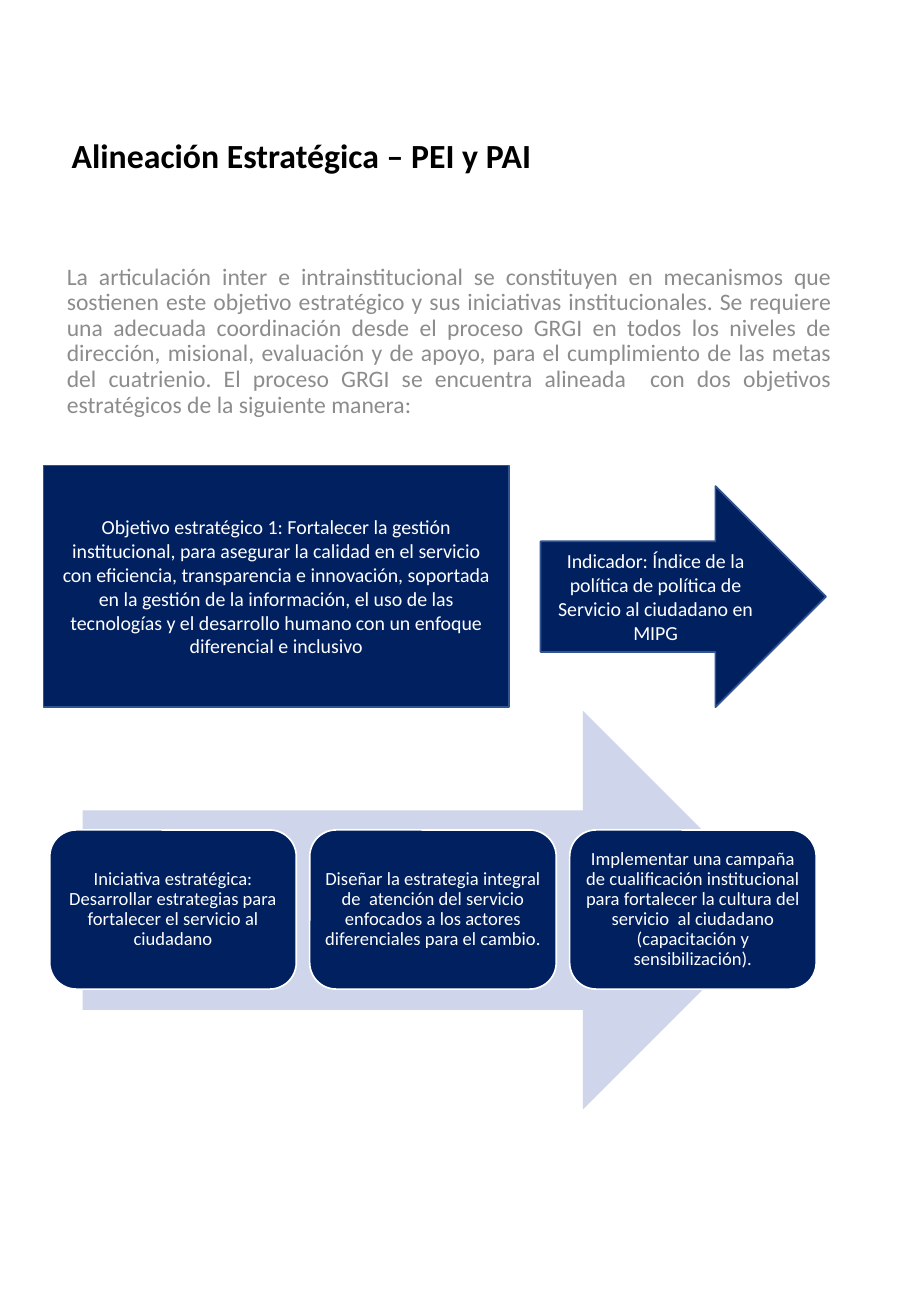
from dataclasses import dataclass

from lxml import etree
from pptx import Presentation
from pptx.dml.color import RGBColor
from pptx.enum.shapes import MSO_SHAPE
from pptx.enum.text import MSO_ANCHOR, MSO_AUTO_SIZE, PP_ALIGN
from pptx.oxml.ns import qn
from pptx.util import Inches, Pt

RECTANGLE = MSO_SHAPE.RECTANGLE
ROUNDED = MSO_SHAPE.ROUNDED_RECTANGLE
ARROW = MSO_SHAPE.RIGHT_ARROW
LEFT, CENTER, JUSTIFY = PP_ALIGN.LEFT, PP_ALIGN.CENTER, PP_ALIGN.JUSTIFY
TOP, MIDDLE = MSO_ANCHOR.TOP, MSO_ANCHOR.MIDDLE
NO_AUTOFIT = MSO_AUTO_SIZE.NONE


@dataclass(frozen=True)
class Theme:
    font: str = "Calibri"
    black: str = "000000"
    gray: str = "8C8C8C"
    white: str = "FFFFFF"
    navy: str = "002060"
    outline: str = "325491"
    pale: str = "CFD5EA"
    title_size: float = 20
    body_size: float = 14
    objective_size: float = 11.8
    card_size: float = 11


THEME = Theme()

TITLE = "Alineación Estratégica – PEI y PAI"
INTRODUCTION = (
    "La articulación inter e intrainstitucional se constituyen en mecanismos que "
    "sostienen este objetivo estratégico y sus iniciativas institucionales. Se requiere "
    "una adecuada coordinación desde el proceso GRGI en todos los niveles de dirección, "
    "misional, evaluación y de apoyo, para el cumplimiento de las metas del cuatrienio. "
    "El proceso GRGI se encuentra alineada  con dos objetivos estratégicos de la "
    "siguiente manera:"
)
OBJECTIVE = (
    "Objetivo estratégico 1: Fortalecer la gestión institucional, para asegurar la "
    "calidad en el servicio con eficiencia, transparencia e innovación, soportada en la "
    "gestión de la información, el uso de las tecnologías y el desarrollo humano con un "
    "enfoque diferencial e inclusivo"
)
INDICATOR = (
    "Indicador: Índice de la política de política de Servicio al ciudadano en MIPG"
)
INITIATIVES = [
    "Iniciativa estratégica: Desarrollar estrategias para fortalecer el servicio al "
    "ciudadano",
    "Diseñar la estrategia integral de  atención del servicio enfocados a los actores "
    "diferenciales para el cambio.",
    "Implementar una campaña de cualificación institucional para fortalecer la cultura "
    "del servicio  al ciudadano (capacitación y sensibilización).",
]


def set_text(shape, text, size, color, align, anchor, spacing=1.0, bold=False):
    frame = shape.text_frame
    frame.text = text
    frame.word_wrap = True
    frame.auto_size = NO_AUTOFIT
    frame.vertical_anchor = anchor
    paragraph = frame.paragraphs[0]
    paragraph.alignment = align
    paragraph.line_spacing = spacing
    paragraph.space_before = Pt(0)
    font = paragraph.runs[0].font
    font.name, font.size, font.bold = THEME.font, Pt(size), bold
    font.color.rgb = RGBColor.from_string(color)


def place(shape, left, top, width, height):
    shape.left, shape.top = Inches(left), Inches(top)
    shape.width, shape.height = Inches(width), Inches(height)


def remove_bullet(paragraph):
    properties = paragraph._p.get_or_add_pPr()
    properties.set("marL", "0")
    properties.set("indent", "0")
    etree.SubElement(properties, qn("a:buNone"))


def add_block(slide, kind, left, top, width, height, fill, line=None):
    shape = slide.shapes.add_shape(
        kind, Inches(left), Inches(top), Inches(width), Inches(height)
    )
    shape.shadow.inherit = False
    shape.fill.solid()
    shape.fill.fore_color.rgb = RGBColor.from_string(fill)
    if line:
        shape.line.color.rgb = RGBColor.from_string(line)
        shape.line.width = Pt(1)
    else:
        shape.line.fill.background()
    return shape


def add_objective(slide, kind, text, left, top, width, height):
    shape = add_block(slide, kind, left, top, width, height, THEME.navy, THEME.outline)
    set_text(shape, text, THEME.objective_size, THEME.white, CENTER, MIDDLE)


def add_initiative(slide, text, left):
    card = add_block(slide, ROUNDED, left, 6.83, 2.03, 1.31, THEME.navy, THEME.white)
    frame = card.text_frame
    frame.margin_left = frame.margin_right = Inches(0.05)
    frame.margin_top = frame.margin_bottom = Inches(0.05)
    set_text(card, text, THEME.card_size, THEME.white, CENTER, MIDDLE, spacing=0.9)


def main():
    presentation = Presentation()
    presentation.slide_width = Inches(7.5)
    presentation.slide_height = Inches(10.83)
    slide = presentation.slides.add_slide(presentation.slide_layouts[1])

    # Title and introduction
    title, body = slide.shapes.title, slide.placeholders[1]
    place(title, 0.49, 1.06, 4.53, 0.44)
    set_text(title, TITLE, THEME.title_size, THEME.black, LEFT, TOP, bold=True)
    place(body, 0.45, 2.13, 6.5, 8.7)
    set_text(body, INTRODUCTION, THEME.body_size, THEME.gray, JUSTIFY, TOP, spacing=0.9)
    remove_bullet(body.text_frame.paragraphs[0])

    # Strategic objective and its indicator
    add_objective(slide, RECTANGLE, OBJECTIVE, 0.36, 3.83, 3.83, 1.99)
    add_objective(slide, ARROW, INDICATOR, 4.45, 4, 2.35, 1.82)

    # Initiatives over the wide arrow
    add_block(slide, ARROW, 0.68, 5.85, 5.76, 3.28, THEME.pale)
    for index, text in enumerate(INITIATIVES):
        add_initiative(slide, text, 0.41 + index * 2.14)

    presentation.save("out.pptx")


if __name__ == "__main__":
    main()
